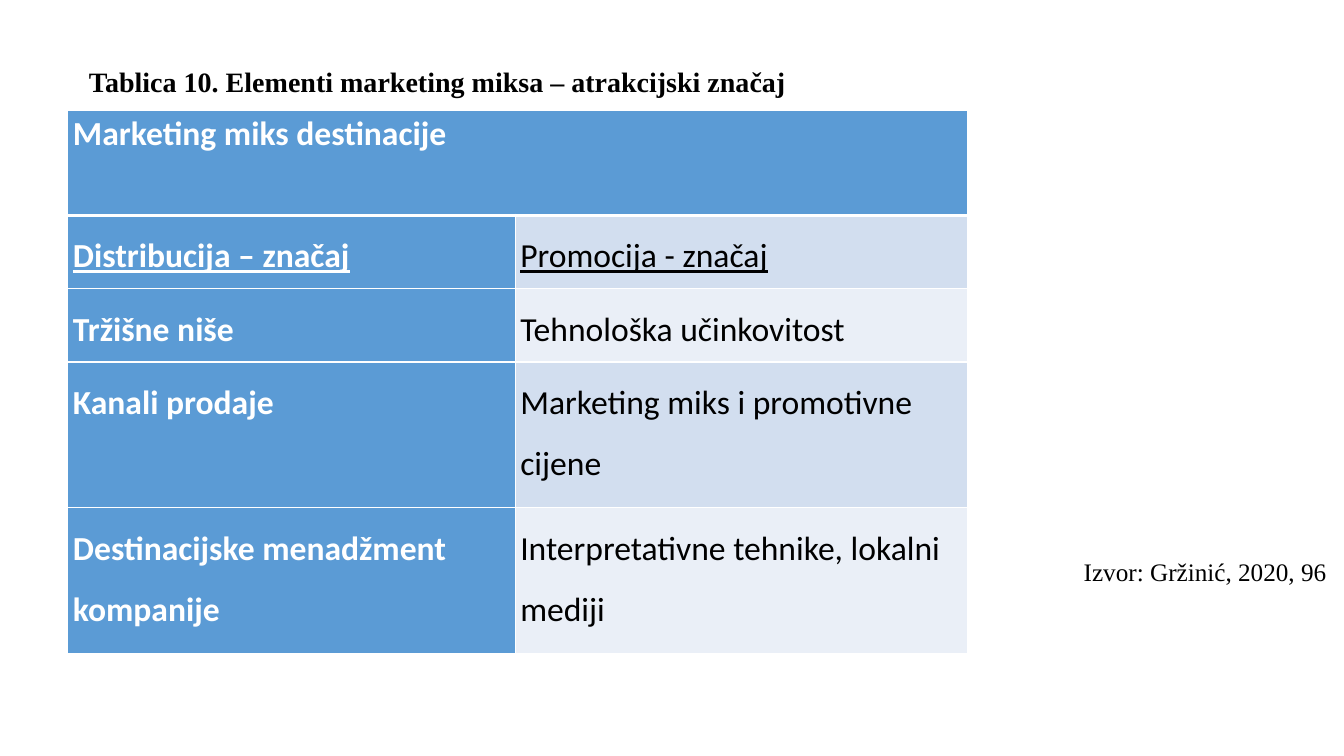
from lxml import etree
from pptx import Presentation
from pptx.dml.color import RGBColor
from pptx.enum import text
from pptx.oxml import ns
from pptx.util import Pt

COLORS = {"header": "5B9BD5", "band_dark": "D2DEEF", "band_light": "EAEFF7",
          "white": "FFFFFF", "black": "000000"}
HEADER = "Marketing miks destinacije"
ROWS = [
    ("Distribucija – značaj", "Promocija - značaj"),
    ("Tržišne niše", "Tehnološka učinkovitost"),
    ("Kanali prodaje", "Marketing miks i promotivne cijene"),
    ("Destinacijske menadžment kompanije",
     "Interpretativne tehnike, lokalni mediji"),
]
COL_SHARES = (0.497, 0.503)
ROW_SHARES = (0.193, 0.135, 0.135, 0.2685, 0.2685)


def rgb(name):
    return RGBColor.from_string(COLORS[name])


def style_font(p, name, size, color, bold=False):
    p.font.name = name
    p.font.size = Pt(size)
    p.font.bold = bold
    p.font.color.rgb = rgb(color)


def set_borders(cell, **widths):
    """Draw white borders, 1 pt wide unless a side is given its own width."""
    tc_pr = cell._tc.get_or_add_tcPr()
    for side in "LRTB":
        ln = etree.SubElement(tc_pr, ns.qn(f"a:ln{side}"),
                              w=str(Pt(widths.get(side, 1))))
        fill = etree.SubElement(ln, ns.qn("a:solidFill"))
        etree.SubElement(fill, ns.qn("a:srgbClr"), val=COLORS["white"])


def fill_cell(cell, words, fill, color, bold, spacing):
    cell.fill.solid()
    cell.fill.fore_color.rgb = rgb(fill)
    cell.margin_left = cell.margin_right = Pt(3.6)
    cell.margin_top = cell.margin_bottom = 0
    p = cell.text_frame.paragraphs[0]
    p.text = words
    p.line_spacing = spacing
    style_font(p, "Calibri", 24, color, bold)
    return p


def add_marketing_table(s, left, top, width, height):
    frame = s.shapes.add_table(len(ROWS) + 1, 2, Pt(left), Pt(top),
                               Pt(width), Pt(height))
    table = frame.table
    table.first_col = True
    for col, share in zip(table.columns, COL_SHARES):
        col.width = Pt(round(width * share, 2))
    for row, share in zip(table.rows, ROW_SHARES):
        row.height = Pt(round(height * share, 2))

    # Header across both columns, with a thick rule below it
    for cell in table.rows[0].cells:
        set_borders(cell, B=3)
    table.cell(0, 0).merge(table.cell(0, 1))
    fill_cell(table.cell(0, 0), HEADER, "header", "white", True, 1.07)

    # Body rows: bold first column, banded second column
    for i, (distribution, promotion) in enumerate(ROWS, start=1):
        band = "band_dark" if i % 2 else "band_light"
        looks = ((distribution, "header", "white", True),
                 (promotion, band, "black", False))
        for cell, look in zip(table.rows[i].cells, looks):
            set_borders(cell, T=3 if i == 1 else 1)
            p = fill_cell(cell, *look, spacing=1.5)
            if i == 1:
                p.font.underline = True


def add_label(s, left, top, width, height, words, size, bold=False,
              anchor=text.MSO_ANCHOR.TOP):
    tf = s.shapes.add_textbox(Pt(left), Pt(top), Pt(width), Pt(height)).text_frame
    tf.word_wrap = False
    tf.auto_size = text.MSO_AUTO_SIZE.SHAPE_TO_FIT_TEXT
    tf.vertical_anchor = anchor
    p = tf.paragraphs[0]
    p.text = words
    style_font(p, "Times New Roman", size, "black", bold)


def main():
    prs = Presentation()
    prs.slide_width, prs.slide_height = Pt(960), Pt(540)
    s = prs.slides.add_slide(prs.slide_layouts[6])

    add_marketing_table(s, 48.5, 79, 643, 388)
    # Source note
    add_label(s, 767, 394, 190, 29, "Izvor: Gržinić, 2020, 96", 18)
    # Table caption
    add_label(s, 56.5, 42, 515.5, 31.5,
              "Tablica 10. Elementi marketing miksa – atrakcijski značaj",
              20, bold=True, anchor=text.MSO_ANCHOR.MIDDLE)
    prs.save("out.pptx")


if __name__ == "__main__":
    main()
